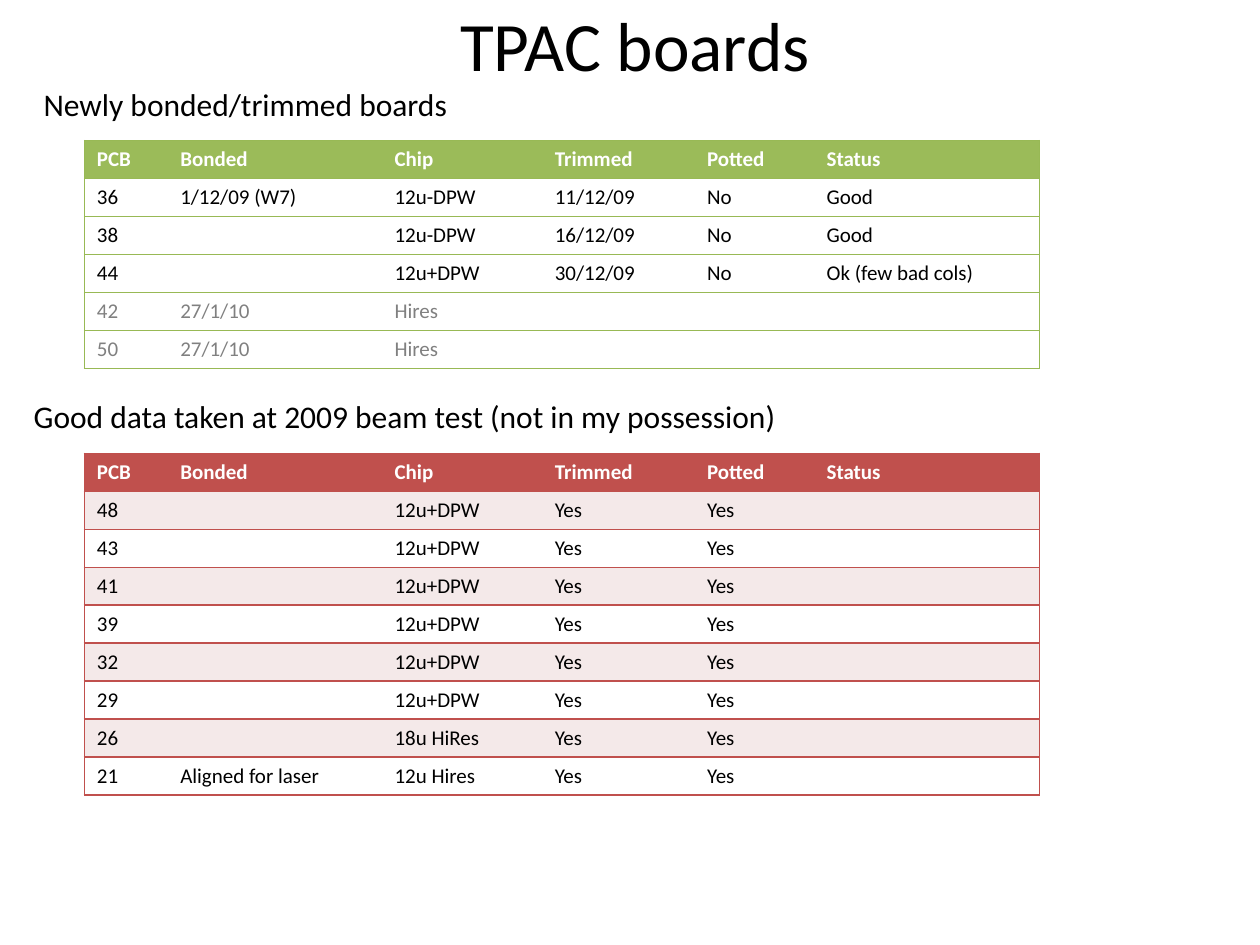
"""Build the slide listing the TPAC boards in two ruled tables."""
from dataclasses import dataclass
from typing import Optional

import lxml.etree
import pptx
import pptx.dml.color
import pptx.enum.text
import pptx.oxml.ns
import pptx.util
from pptx.util import Cm


@dataclass(frozen=True)
class Theme:
    font: str = "Calibri"
    title_size: float = 39.6
    heading_size: float = 18
    cell_size: float = 12
    ink: str = "000000"
    paper: str = "FFFFFF"
    pending: str = "808080"
    green: str = "9BBB59"
    green_rule: str = "98B955"
    red: str = "C0504D"
    red_tint: str = "F4E9E9"


@dataclass(frozen=True)
class Heading:
    text: str
    left: float
    top: float
    width: float


@dataclass(frozen=True)
class BoardTable:
    top: float
    header: str
    rule: str
    rule_width: float
    bands: tuple[Optional[str], ...]
    boards: list[tuple[str, ...]]
    pending: tuple[str, ...] = ()


THEME = Theme()
COLUMNS = ("PCB", "Bonded", "Chip", "Trimmed", "Potted", "Status")
COLUMN_WIDTHS = (1.68, 4.32, 3.23, 3.07, 2.41, 4.55)
TABLE_LEFT = 1.7
ROW_HEIGHT = 0.765

HEADINGS = (
    Heading("Newly bonded/trimmed boards", 0.63, 1.58, 8.74),
    Heading("Good data taken at 2009 beam test (not in my possession)", 0.43, 7.88, 15.85),
)

NEW_BOARDS = BoardTable(
    2.83, THEME.green, THEME.green_rule, 0.75, (None,),
    [
        ("36", "1/12/09 (W7)", "12u-DPW", "11/12/09", "No", "Good"),
        ("38", "", "12u-DPW", "16/12/09", "No", "Good"),
        ("44", "", "12u+DPW", "30/12/09", "No", "Ok (few bad cols)"),
        ("42", "27/1/10", "Hires", "", "", ""),
        ("50", "27/1/10", "Hires", "", "", ""),
    ],
    pending=("42", "50"),
)

BEAM_TEST_CHIPS = {
    "48": "12u+DPW", "43": "12u+DPW", "41": "12u+DPW", "39": "12u+DPW",
    "32": "12u+DPW", "29": "12u+DPW", "26": "18u HiRes", "21": "12u Hires",
}
BONDING_NOTES = {"21": "Aligned for laser"}
BEAM_TEST_BOARDS = BoardTable(
    9.14, THEME.red, THEME.red, 1, (THEME.red_tint, THEME.paper),
    [(pcb, BONDING_NOTES.get(pcb, ""), chip, "Yes", "Yes", "")
     for pcb, chip in BEAM_TEST_CHIPS.items()],
)


def rgb(value: str) -> pptx.dml.color.RGBColor:
    return pptx.dml.color.RGBColor.from_string(value)


def style(paragraph, size: float, color: str, bold: bool = False) -> None:
    paragraph.font.name = THEME.font
    paragraph.font.size = pptx.util.Pt(size)
    paragraph.font.bold = bold
    paragraph.font.color.rgb = rgb(color)


def add_border(cell, side: str, color: Optional[str], width: float) -> None:
    qn = pptx.oxml.ns.qn
    properties = cell._tc.get_or_add_tcPr()
    line = lxml.etree.SubElement(properties, qn(f"a:ln{side}"), w=str(pptx.util.Pt(width)))
    if color is None:
        lxml.etree.SubElement(line, qn("a:noFill"))
    else:
        fill = lxml.etree.SubElement(line, qn("a:solidFill"))
        lxml.etree.SubElement(fill, qn("a:srgbClr"), val=color)


def fill_cell(cell, text: str, color: str, bold: bool, background: Optional[str]) -> None:
    paragraph = cell.text_frame.paragraphs[0]
    style(paragraph, THEME.cell_size, color, bold)
    if text:
        paragraph.text = text
    else:
        end = lxml.etree.SubElement(paragraph._p, pptx.oxml.ns.qn("a:endParaRPr"))
        end.set("sz", str(int(THEME.cell_size * 100)))
    if background is None:
        cell.fill.background()
    else:
        cell.fill.solid()
        cell.fill.fore_color.rgb = rgb(background)


def add_board_table(slide, spec: BoardTable) -> None:
    rows = [COLUMNS, *spec.boards]
    table = slide.shapes.add_table(
        len(rows), len(COLUMNS), Cm(TABLE_LEFT), Cm(spec.top),
        Cm(sum(COLUMN_WIDTHS)), Cm(ROW_HEIGHT * len(rows))).table
    table.horz_banding = False
    for column, width in zip(table.columns, COLUMN_WIDTHS):
        column.width = Cm(width)
    for r, values in enumerate(rows):
        table.rows[r].height = Cm(ROW_HEIGHT)
        is_header = r == 0
        if is_header:
            color, background = THEME.paper, spec.header
        else:
            color = THEME.pending if values[0] in spec.pending else THEME.ink
            background = spec.bands[(r - 1) % len(spec.bands)]
        for c, text in enumerate(values):
            cell = table.cell(r, c)
            outer_left, outer_right = c == 0, c == len(COLUMNS) - 1
            for side, ruled in (("L", outer_left), ("R", outer_right), ("T", True), ("B", True)):
                add_border(cell, side, spec.rule if ruled else None, spec.rule_width)
            fill_cell(cell, text, color, is_header, background)


def add_heading(slide, heading: Heading) -> None:
    frame = slide.shapes.add_textbox(
        Cm(heading.left), Cm(heading.top), Cm(heading.width), Cm(1.03)).text_frame
    frame.word_wrap = False
    frame.auto_size = pptx.enum.text.MSO_AUTO_SIZE.SHAPE_TO_FIT_TEXT
    frame.text = heading.text
    style(frame.paragraphs[0], THEME.heading_size, THEME.ink)


def set_title(slide, text: str) -> None:
    title = slide.shapes.title
    title.left, title.top, title.width, title.height = Cm(1.27), Cm(0), Cm(23.06), Cm(1.78)
    frame = title.text_frame
    frame.auto_size = pptx.enum.text.MSO_AUTO_SIZE.NONE
    frame.vertical_anchor = pptx.enum.text.MSO_ANCHOR.MIDDLE
    frame.text = text
    frame.paragraphs[0].alignment = pptx.enum.text.PP_ALIGN.CENTER
    style(frame.paragraphs[0], THEME.title_size, THEME.ink)


def main() -> None:
    presentation = pptx.Presentation()
    presentation.slide_width, presentation.slide_height = Cm(25.4), Cm(19.05)
    slide = presentation.slides.add_slide(presentation.slide_layouts[5])
    set_title(slide, "TPAC boards")
    for heading, boards in zip(HEADINGS, (NEW_BOARDS, BEAM_TEST_BOARDS)):
        add_heading(slide, heading)
        add_board_table(slide, boards)
    presentation.save("out.pptx")


if __name__ == "__main__":
    main()
